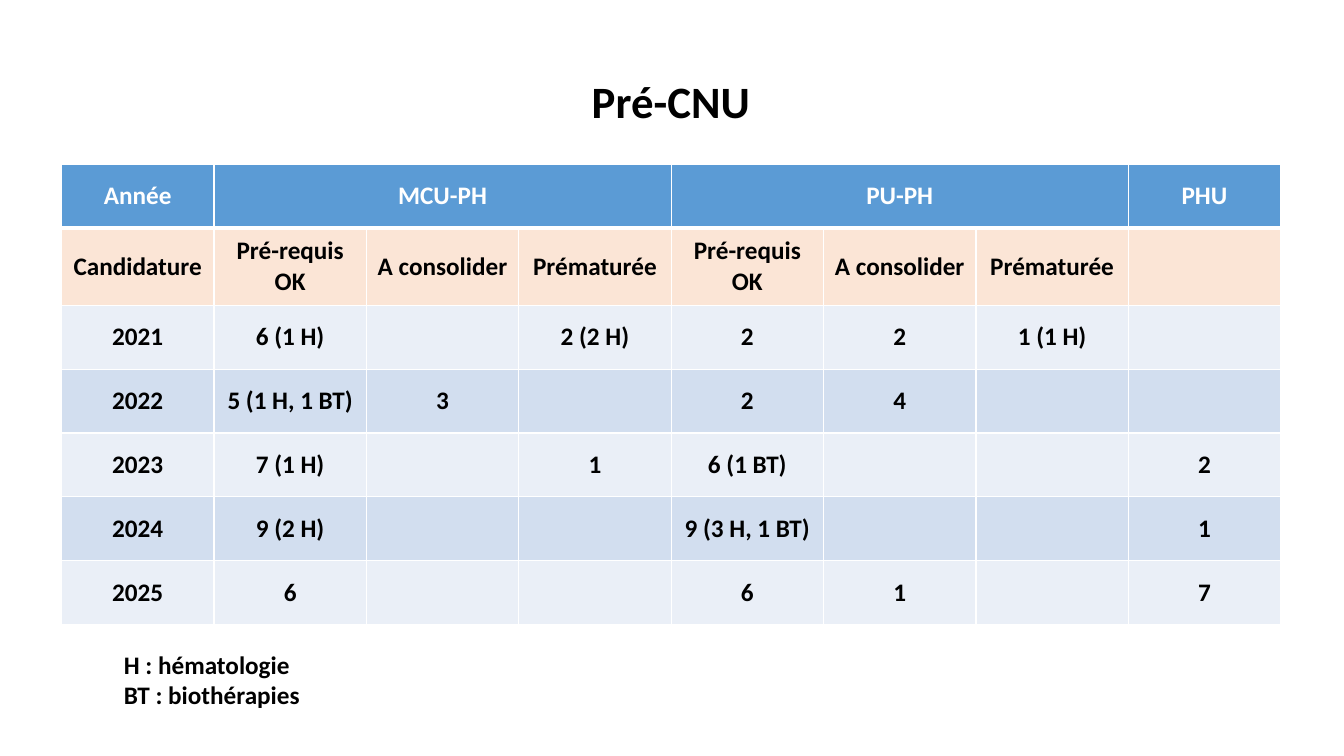
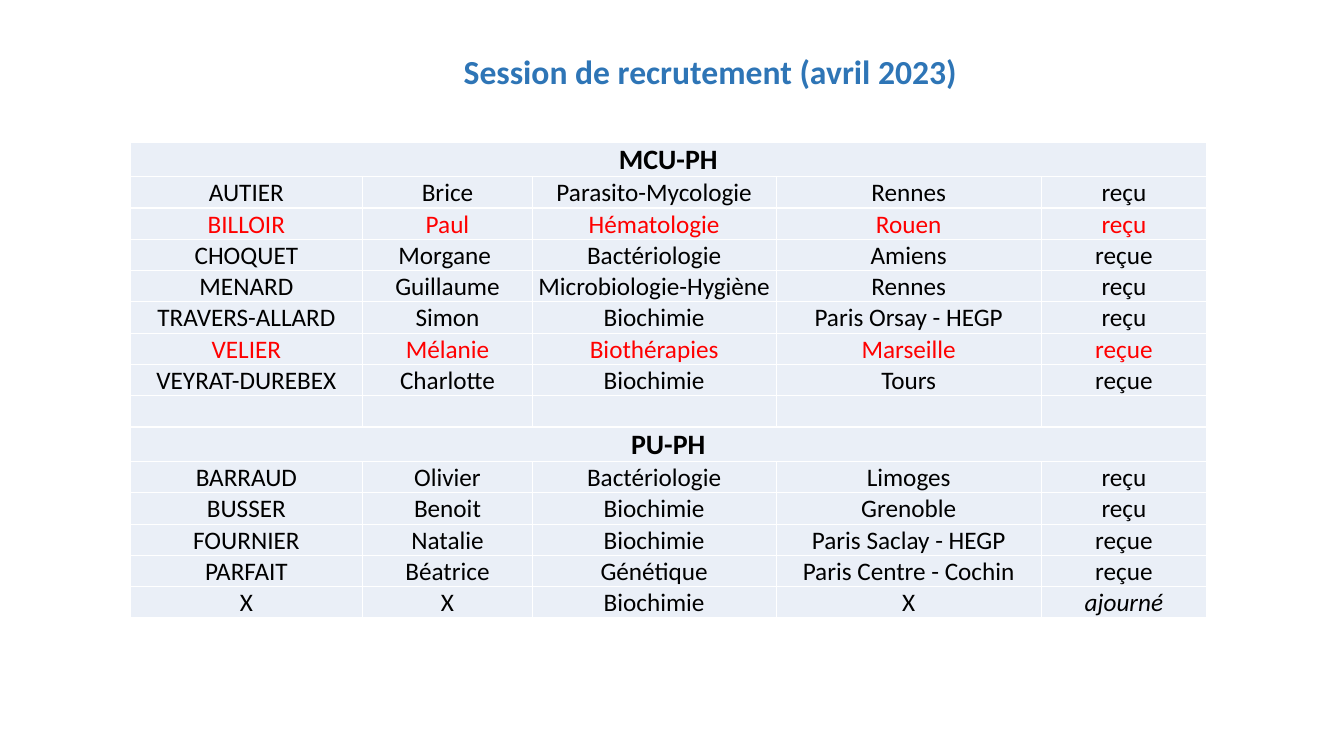
from pptx import Presentation
from pptx.dml.color import RGBColor
from pptx.enum.text import MSO_ANCHOR, PP_ALIGN
from pptx.oxml import parse_xml
from pptx.oxml.ns import nsdecls
from pptx.util import Inches, Pt

CENTER = PP_ALIGN.CENTER
MIDDLE = MSO_ANCHOR.MIDDLE
BOTTOM = MSO_ANCHOR.BOTTOM

FONT = "Calibri"
BLACK = RGBColor(0x00, 0x00, 0x00)
WHITE = RGBColor(0xFF, 0xFF, 0xFF)
RED = RGBColor(0xFF, 0x00, 0x00)
TITLE_BLUE = RGBColor(0x2E, 0x75, 0xB6)
HEADER_BLUE = RGBColor(0x5B, 0x9B, 0xD5)
PEACH = RGBColor(0xFB, 0xE5, 0xD6)
PALE_BLUE = RGBColor(0xEA, 0xEF, 0xF7)
BAND_BLUE = RGBColor(0xD2, 0xDE, 0xEF)

deck = Presentation()
deck.slide_width, deck.slide_height = Inches(13.33), Inches(7.5)
BLANK = deck.slide_layouts[6]

# The slide is a grid of 100 columns by 100 rows.
COLUMN = deck.slide_width / 100
ROW = deck.slide_height / 100


def write(para, text, size, color=BLACK, bold=True, italic=False):
    span = para.add_run()
    span.text = text
    span.font.name, span.font.size = FONT, Pt(size)
    span.font.color.rgb = color
    span.font.bold, span.font.italic = bold, italic


def style_cell(cell, fill, top=1, bottom=1):
    """Fill the cell and rule it in white; top and bottom are line widths in points."""
    cell.fill.solid()
    cell.fill.fore_color.rgb = fill
    cell.vertical_anchor = MIDDLE
    cell.text_frame.paragraphs[0].alignment = CENTER
    sides = (("lnL", 1), ("lnR", 1), ("lnT", top), ("lnB", bottom))
    for position, (side, width) in enumerate(sides):
        line = parse_xml(
            f'<a:{side} {nsdecls("a")} w="{Pt(width)}"><a:solidFill>'
            f'<a:srgbClr val="{WHITE}"/></a:solidFill></a:{side}>')
        cell._tc.get_or_add_tcPr().insert(position, line)


pages = [deck.slides.add_slide(BLANK) for _ in range(2)]

# Text boxes: page, left, top, width, height, size, colour, lines
TEXTS = [
    (0, 43.29, 9.07, 13.43, 8.53, 32, BLACK, ["Pré-CNU"]),
    (0, 8.48, 85.2, 14.7, 9.47, 18, BLACK, ["H : hématologie", "BT : biothérapies"]),
    (1, 33.76, 6.13, 38.56, 6.67, 24, TITLE_BLUE, ["Session de recrutement (avril 2023)"]),
]
for number, left, top, width, height, size, color, lines in TEXTS:
    box = pages[number].shapes.add_textbox(
        int(left * COLUMN), int(top * ROW), int(width * COLUMN), int(height * ROW))
    frame = box.text_frame
    frame.word_wrap = False
    for index, text in enumerate(lines):
        para = frame.add_paragraph() if index else frame.paragraphs[0]
        write(para, text, size, color)

# Pré-CNU: applications by year
STEPS = ["Pré-requis OK", "A consolider", "Prématurée"]
APPLICATIONS = [
    ["Année", "MCU-PH", "", "", "PU-PH", "", "", "PHU"],
    ["Candidature", *STEPS, *STEPS, ""],
    ["2021", "6 (1 H)", "", "2 (2 H)", "2", "2", "1 (1 H)", ""],
    ["2022", "5 (1 H, 1 BT)", "3", "", "2", "4", "", ""],
    ["2023", "7 (1 H)", "", "1", "6 (1 BT)", "", "", "2"],
    ["2024", "9 (2 H)", "", "", "9 (3 H, 1 BT)", "", "", "1"],
    ["2025", "6", "", "", "6", "1", "", "7"],
]
application_widths = [11.34] * 8
application_heights = [8.45, 10.2] + [8.45] * 5
applications = pages[0].shapes.add_table(
    len(APPLICATIONS), len(application_widths), int(4.58 * COLUMN), int(21.73 * ROW),
    int(sum(application_widths) * COLUMN), int(sum(application_heights) * ROW)).table

for row, texts in enumerate(APPLICATIONS):
    if row < 2:
        fill = (HEADER_BLUE, PEACH)[row]
    else:
        fill = (PALE_BLUE, BAND_BLUE)[row % 2]
    for column, text in enumerate(texts):
        cell = applications.cell(row, column)
        style_cell(cell, fill, top=3 if row == 1 else 1, bottom=3 if row == 0 else 1)
        if text:
            write(cell.text_frame.paragraphs[0], text, 18, BLACK if row else WHITE)
for first in (1, 4):
    applications.cell(0, first).merge(applications.cell(0, first + 2))

# Recruitment session: a row with one text is a section heading
CANDIDATES = [
    ["MCU-PH"],
    ["AUTIER", "Brice", "Parasito-Mycologie", "Rennes", "reçu"],
    ["BILLOIR", "Paul", "Hématologie", "Rouen", "reçu"],
    ["CHOQUET", "Morgane ", "Bactériologie", "Amiens", "reçue"],
    ["MENARD", "Guillaume", "Microbiologie-Hygiène", "Rennes", "reçu"],
    ["TRAVERS-ALLARD", "Simon", "Biochimie", "Paris Orsay - HEGP", "reçu"],
    ["VELIER", "Mélanie", "Biothérapies", "Marseille", "reçue"],
    ["VEYRAT-DUREBEX", "Charlotte", "Biochimie", "Tours", "reçue"],
    [],
    ["PU-PH"],
    ["BARRAUD", "Olivier", "Bactériologie", "Limoges", "reçu"],
    ["BUSSER", "Benoit", "Biochimie", "Grenoble", "reçu"],
    ["FOURNIER", "Natalie", "Biochimie", "Paris Saclay - HEGP", "reçue"],
    ["PARFAIT", "Béatrice", "Génétique", "Paris Centre - Cochin", "reçue"],
    ["X", "X", "Biochimie", "X", "ajourné"],
]
HIGHLIGHTED = {"Hématologie", "Biothérapies"}
candidate_widths = [17.33, 12.6, 18.15, 19.73, 12.3]
candidate_heights = [4.5 if len(texts) == 1 else 4.14 for texts in CANDIDATES]
candidates = pages[1].shapes.add_table(
    len(CANDIDATES), len(candidate_widths), int(9.67 * COLUMN), int(18.8 * ROW),
    int(sum(candidate_widths) * COLUMN), int(sum(candidate_heights) * ROW)).table
candidates.first_row = candidates.horz_banding = False

for row, texts in enumerate(CANDIDATES):
    heading = len(texts) == 1
    color = RED if HIGHLIGHTED.intersection(texts) else BLACK
    for column in range(len(candidate_widths)):
        cell = candidates.cell(row, column)
        style_cell(cell, PALE_BLUE)
        cell.margin_left = cell.margin_right = cell.margin_top = Inches(0.01)
        cell.margin_bottom = 0
        if heading:
            cell.vertical_anchor = BOTTOM
        if column < len(texts):
            write(cell.text_frame.paragraphs[0], texts[column], 20 if heading else 18,
                  color, bold=heading, italic=texts[column] == "ajourné")
    if heading:
        candidates.cell(row, 0).merge(candidates.cell(row, len(candidate_widths) - 1))

for table, widths, heights in (
        (applications, application_widths, application_heights),
        (candidates, candidate_widths, candidate_heights)):
    for table_column, width in zip(table.columns, widths):
        table_column.width = int(width * COLUMN)
    for table_row, height in zip(table.rows, heights):
        table_row.height = int(height * ROW)

deck.save("out.pptx")
